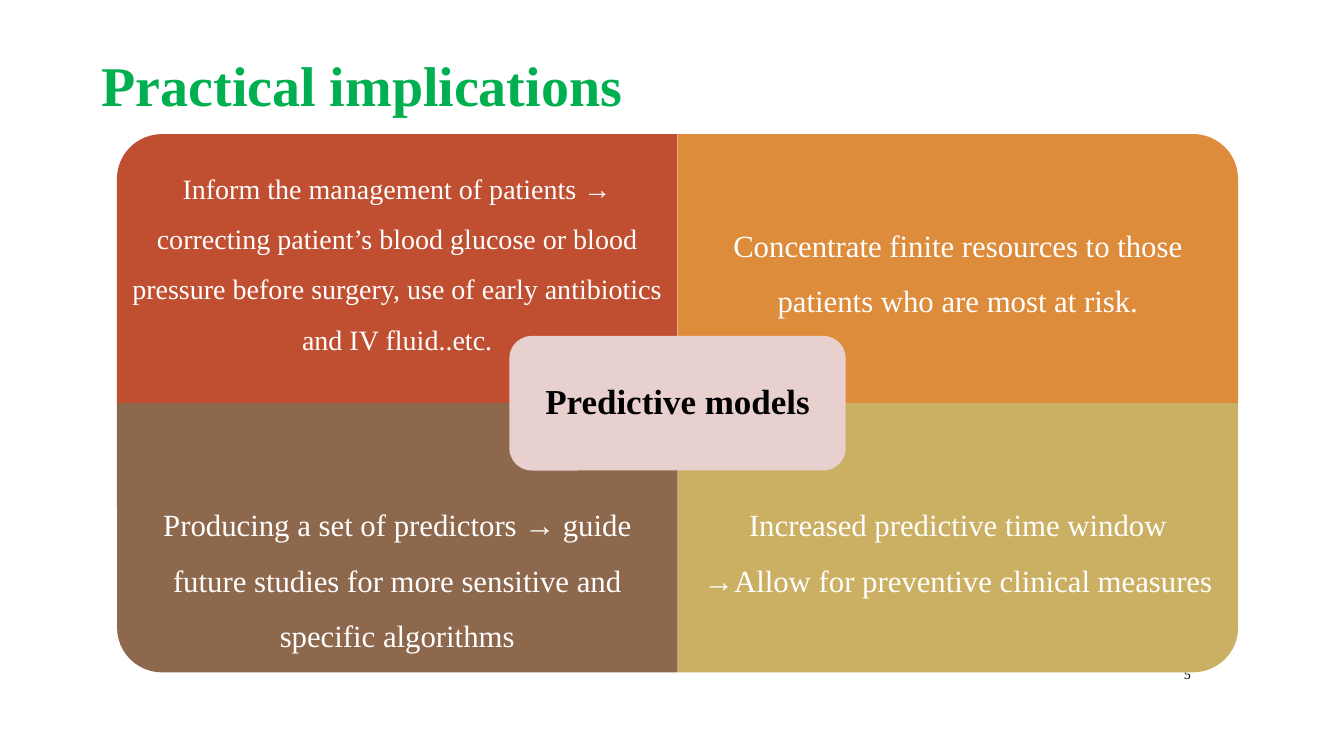
import pptx
import pptx.dml.color
import pptx.enum.shapes
import pptx.enum.text
import pptx.util

RGBColor = pptx.dml.color.RGBColor
Inches = pptx.util.Inches
Align = pptx.enum.text.PP_ALIGN
Anchor = pptx.enum.text.MSO_ANCHOR
Preset = pptx.enum.shapes.MSO_SHAPE

GREEN = RGBColor(0x00, 0xB0, 0x50)
RUST = RGBColor(0xC0, 0x4F, 0x32)
ORANGE = RGBColor(0xDD, 0x8C, 0x3C)
BROWN = RGBColor(0x8E, 0x68, 0x4C)
SAND = RGBColor(0xCB, 0xAF, 0x62)
ROSE = RGBColor(0xE8, 0xD0, 0xCE)
WHITE = RGBColor(0xFF, 0xFF, 0xFF)
BLACK = RGBColor(0x00, 0x00, 0x00)


class MatrixSlide:
    """A slide with a two-by-two matrix, placed in columns and rows of its grid."""

    font = "Times New Roman"
    left, top = 1.16, 1.33
    column, row = 5.56, 2.67

    def __init__(self, deck):
        self.slide = deck.slides.add_slide(deck.slide_layouts[5])
        self.matrix = None

    def cell(self, col, row, cols, rows):
        return [Inches(length) for length in (
            self.left + col * self.column, self.top + row * self.row,
            cols * self.column, rows * self.row)]

    def set_words(self, holder, text, size, color, bold=False, align=Align.CENTER,
                  anchor=Anchor.MIDDLE, inset=0.1, spacing=1.0):
        frame = holder.text_frame
        frame.word_wrap = True
        frame.auto_size = pptx.enum.text.MSO_AUTO_SIZE.NONE
        frame.vertical_anchor = anchor
        frame.margin_left = frame.margin_right = Inches(inset)
        frame.margin_top = frame.margin_bottom = Inches(inset)
        paragraph = frame.paragraphs[0]
        paragraph.text = text
        paragraph.alignment = align
        paragraph.line_spacing = spacing
        for run in paragraph.runs:
            run.font.name = self.font
            run.font.size = pptx.util.Pt(size)
            run.font.bold = bold
            run.font.color.rgb = color

    def title(self, text):
        heading = self.slide.shapes.title
        heading.left, heading.top = Inches(-0.96), Inches(0.43)
        heading.width, heading.height = Inches(9.1), Inches(0.8)
        self.set_words(heading, text, 40, GREEN, bold=True)

    def page_number(self, text):
        number = self.slide.shapes.add_textbox(
            Inches(11.32), Inches(6.53), Inches(0.59), Inches(0.31))
        self.set_words(number, text, 10, BLACK, align=Align.RIGHT)

    def start_matrix(self):
        self.matrix = self.slide.shapes.add_group_shape().shapes

    def tile(self, preset, place, fill, rotation=0):
        x, y, width, height = place
        if rotation % 180:
            x, y = x + (width - height) // 2, y + (height - width) // 2
            width, height = height, width
        tile = self.matrix.add_shape(preset, x, y, width, height)
        tile.rotation = rotation
        tile.shadow.inherit = False
        tile.fill.solid()
        tile.fill.fore_color.rgb = fill
        tile.line.fill.background()
        return tile

    def quadrant(self, col, row, fill, rotation, text, text_row, text_rows,
                 anchor, size=22, inset=0.17):
        self.tile(Preset.ROUND_1_RECTANGLE, self.cell(col, row, 1, 1), fill, rotation)
        statement = self.matrix.add_textbox(*self.cell(col, text_row, 1, text_rows))
        self.set_words(statement, text, size, WHITE, anchor=anchor, inset=inset,
                       spacing=1.5)

    def centre(self, text):
        hub = self.tile(Preset.ROUNDED_RECTANGLE, self.cell(0.7, 0.75, 0.6, 0.5), ROSE)
        self.set_words(hub, text, 25, BLACK, bold=True, spacing=0.9)


def main():
    deck = pptx.Presentation()
    deck.slide_width, deck.slide_height = Inches(13.33), Inches(7.5)
    page = MatrixSlide(deck)
    page.title("Practical implications")
    page.page_number("5")
    page.start_matrix()
    page.quadrant(
        0, 0, RUST, 270,
        "Inform the management of patients → correcting patient’s blood glucose or "
        "blood pressure before surgery, use of early antibiotics and IV fluid..etc.",
        0, 0.9, Anchor.MIDDLE, size=20, inset=0.14)
    page.quadrant(
        1, 0, ORANGE, 0,
        "Concentrate finite resources to those patients who are most at risk.",
        0, 0.75, Anchor.BOTTOM)
    page.quadrant(
        0, 1, BROWN, 180,
        "Producing a set of predictors → guide future studies for more sensitive "
        "and specific algorithms",
        1.25, 0.75, Anchor.TOP)
    page.quadrant(
        1, 1, SAND, 90,
        "Increased predictive time window\v→Allow for preventive clinical measures",
        1.25, 0.75, Anchor.TOP)
    page.centre("Predictive models")
    deck.save("out.pptx")


if __name__ == "__main__":
    main()
